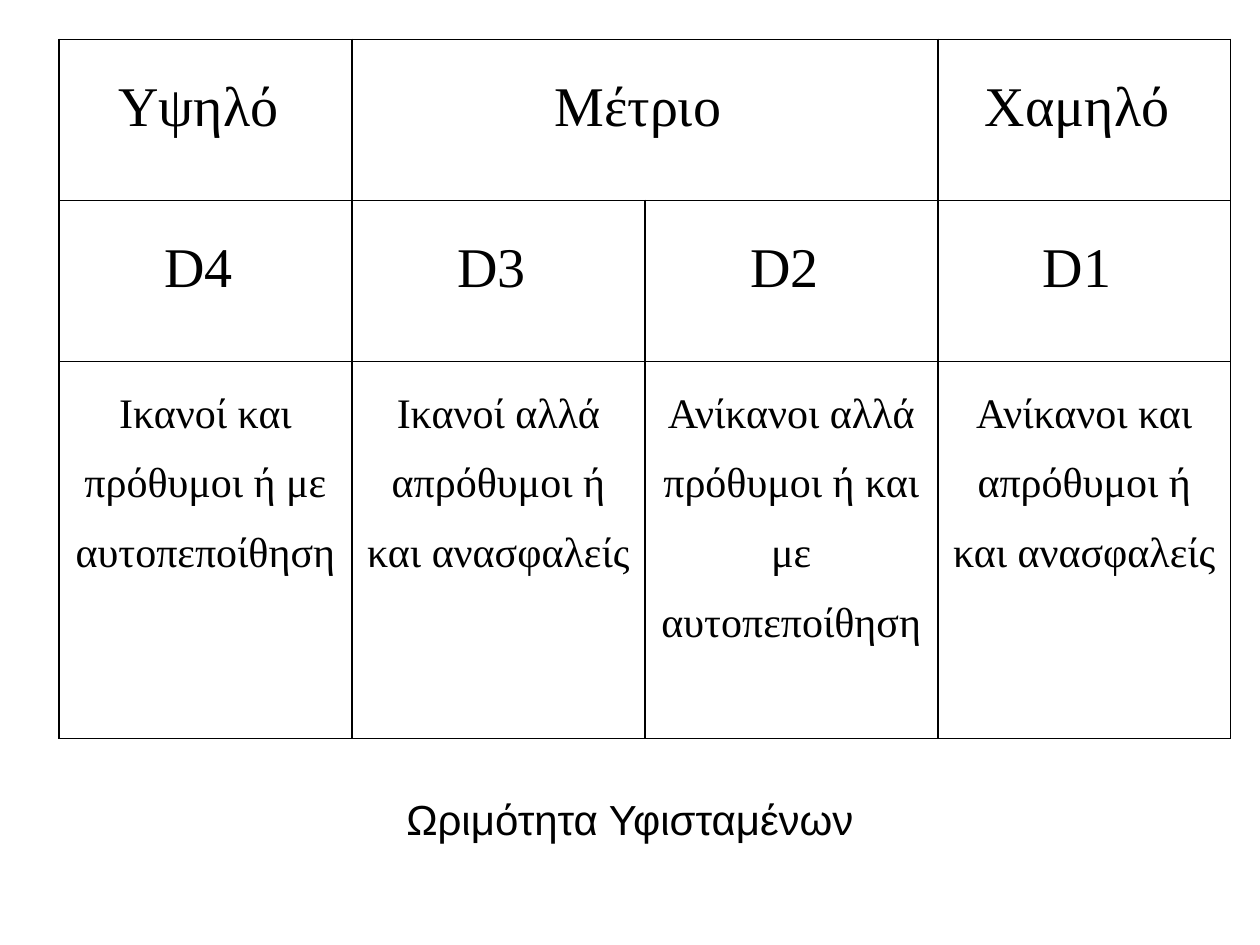
"""Build a slide with a table of follower maturity levels and its caption."""
from lxml.etree import SubElement
from pptx import Presentation
from pptx.dml.color import RGBColor
from pptx.enum.text import MSO_ANCHOR, MSO_AUTO_SIZE, PP_ALIGN
from pptx.oxml.ns import qn
from pptx.util import Pt


def format_text(paragraph, font_name, size, color="000000"):
    paragraph.alignment = PP_ALIGN.CENTER
    paragraph.font.name = font_name
    paragraph.font.size = Pt(size)
    paragraph.font.color.rgb = RGBColor.from_string(color)


def add_borders(cell, color="000000", width=1):
    properties = cell._tc.get_or_add_tcPr()
    for position, side in enumerate(("a:lnL", "a:lnR", "a:lnT", "a:lnB")):
        line = SubElement(properties, qn(side), w=str(Pt(width)))
        fill = SubElement(line, qn("a:solidFill"))
        SubElement(fill, qn("a:srgbClr"), val=color)
        properties.insert(position, line)


presentation = Presentation()
presentation.slide_width = Pt(720)
presentation.slide_height = Pt(540)
slide = presentation.slides.add_slide(presentation.slide_layouts[6])

levels = [
    ["Υψηλό ", "Μέτριο ", "", "Χαμηλό "],
    ["D4 ", "D3 ", "D2 ", "D1 "],
    [
        "Ικανοί και πρόθυμοι ή με αυτοπεποίθηση ",
        "Ικανοί αλλά απρόθυμοι ή και ανασφαλείς ",
        "Ανίκανοι αλλά πρόθυμοι ή και με αυτοπεποίθηση ",
        "Ανίκανοι και απρόθυμοι ή και ανασφαλείς ",
    ],
]
row_heights = [92, 92, 215.5]
text_sizes = [32, 32, 24]

maturity = slide.shapes.add_table(
    3, 4, Pt(33.7), Pt(22.5), Pt(669.6), Pt(sum(row_heights))
).table
maturity.first_row = False
maturity.horz_banding = False
for column in maturity.columns:
    column.width = Pt(167.4)
for row, height, size, texts in zip(maturity.rows, row_heights, text_sizes, levels):
    row.height = Pt(height)
    for cell, text in zip(row.cells, texts):
        cell.text = text
        cell.fill.solid()
        cell.fill.fore_color.rgb = RGBColor.from_string("FFFFFF")
        add_borders(cell)
        wording = cell.text_frame.paragraphs[0]
        wording.line_spacing = 1.5
        format_text(wording, "Times New Roman", size)
maturity.cell(0, 1).merge(maturity.cell(0, 2))

caption = slide.shapes.add_textbox(Pt(0), Pt(450), Pt(720), Pt(36)).text_frame
caption.word_wrap = True
caption.auto_size = MSO_AUTO_SIZE.SHAPE_TO_FIT_TEXT
caption.vertical_anchor = MSO_ANCHOR.MIDDLE
caption.text = "Ωριμότητα Υφισταμένων"
format_text(caption.paragraphs[0], "Arial", 24)

presentation.save("out.pptx")
